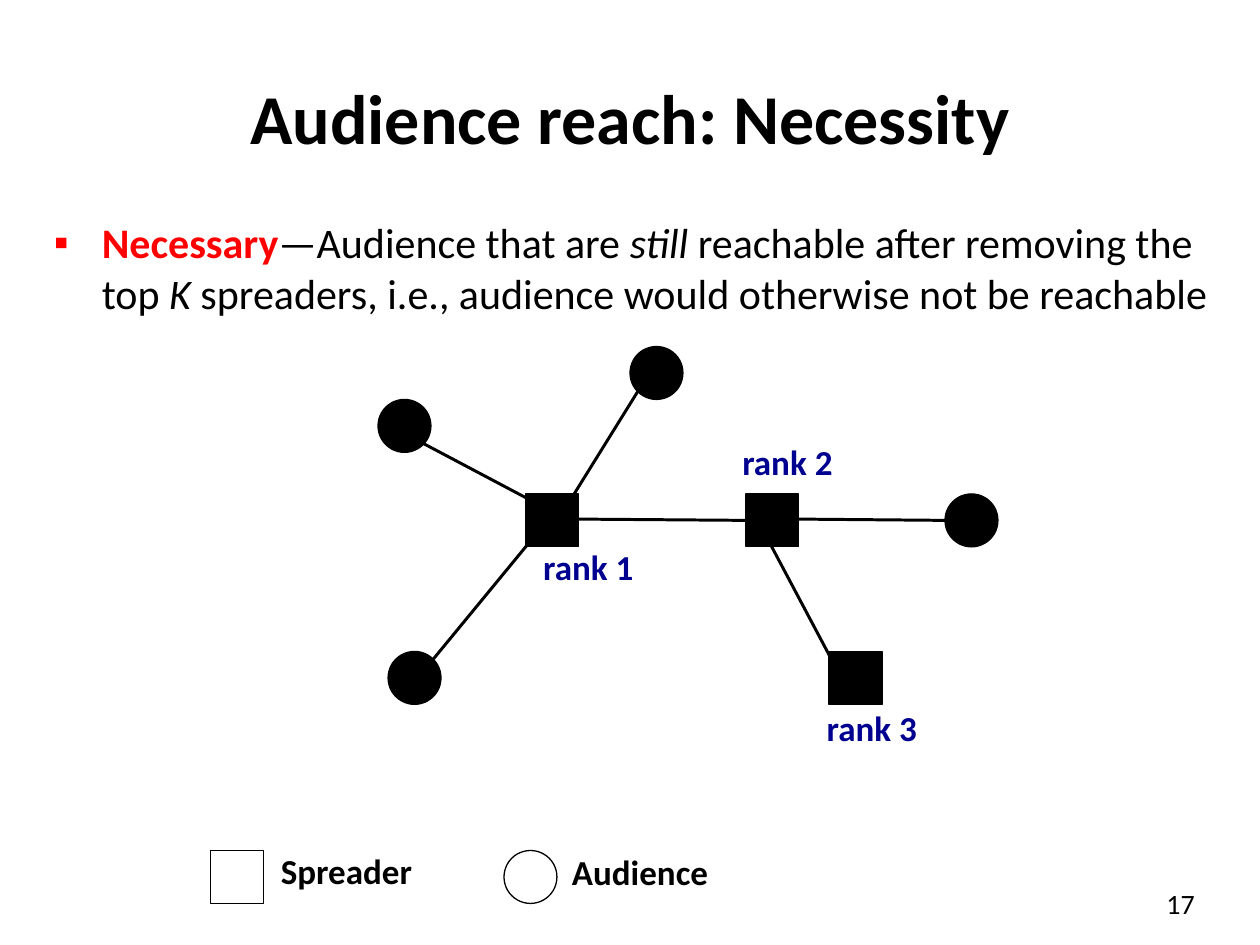
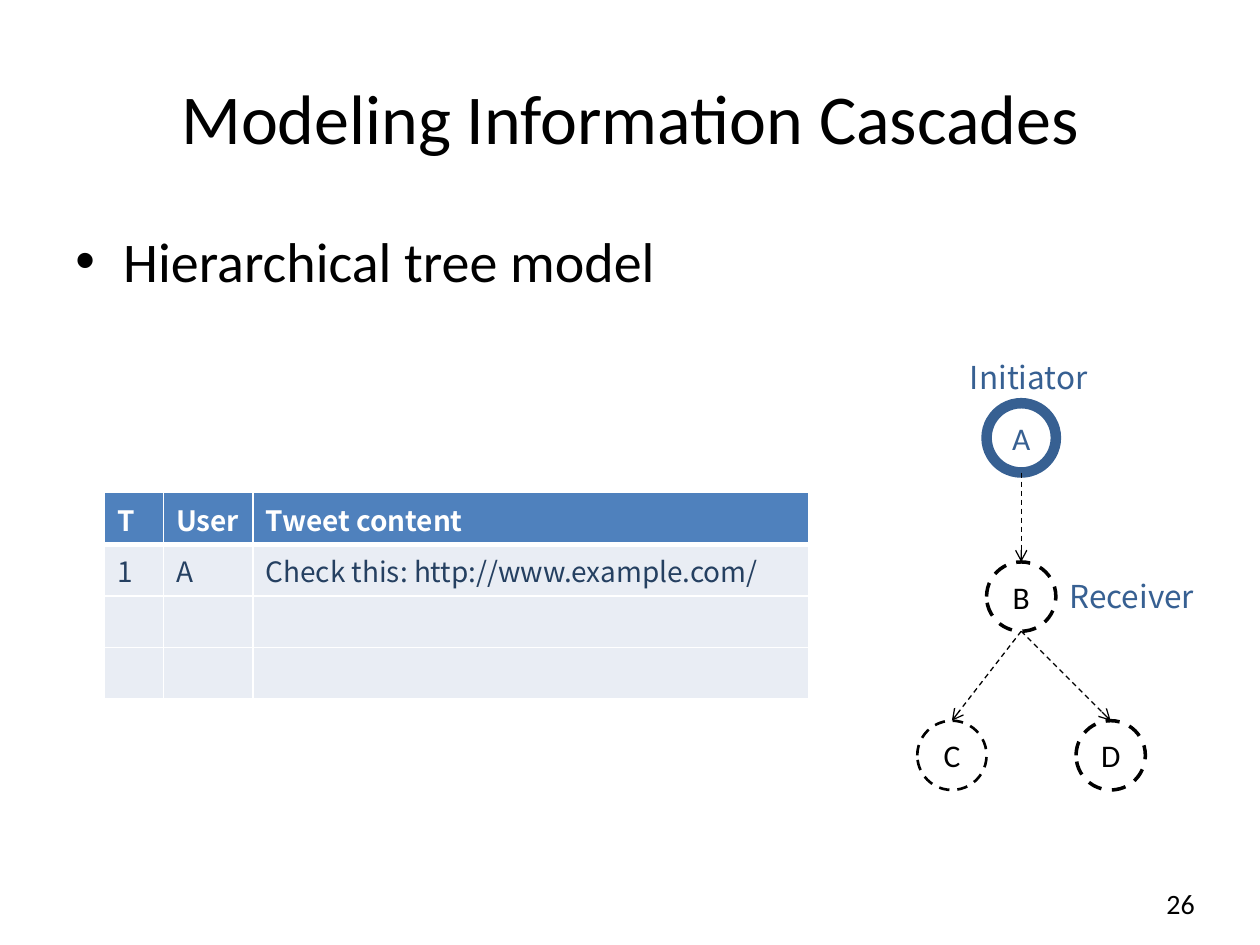
import lxml.etree
import pptx
import pptx.dml.color
import pptx.enum.dml
import pptx.enum.shapes
import pptx.enum.text
import pptx.oxml.ns
import pptx.util

Inches = pptx.util.Inches
RGBColor = pptx.dml.color.RGBColor
Kind = pptx.enum.shapes.MSO_SHAPE
Align = pptx.enum.text.PP_ALIGN
Anchor = pptx.enum.text.MSO_ANCHOR

BLACK = RGBColor(0x00, 0x00, 0x00)
WHITE = RGBColor(0xFF, 0xFF, 0xFF)
RED = RGBColor(0xFF, 0x00, 0x00)
NAVY = RGBColor(0x00, 0x00, 0x90)
STEEL = RGBColor(0x37, 0x60, 0x92)
DARK_BLUE = RGBColor(0x25, 0x40, 0x61)
HEADER_BLUE = RGBColor(0x4F, 0x81, 0xBD)
PALE_BLUE = RGBColor(0xE9, 0xED, 0xF4)

MAIN_FONT = "Calibri"
DETAIL_FONT = "Noto Sans CJK KR"


def add_element(parent, tag, **attributes):
    element = lxml.etree.SubElement(parent, pptx.oxml.ns.qn(tag))
    for name, value in attributes.items():
        element.set(name, str(value))
    return element


def add_text(paragraph, text, size=18, color=BLACK, font=MAIN_FONT,
             bold=False, italic=False):
    run = paragraph.add_run()
    run.text = text
    run.font.size = pptx.util.Pt(size)
    run.font.color.rgb = color
    run.font.name = font
    run.font.bold = bold
    run.font.italic = italic
    add_element(run.font._element, "a:ea", typeface=font)


class SlideBuilder:
    """Holds the shared style and the slide being built."""

    def __init__(self, presentation):
        self.presentation = presentation
        self.slide = None

    def start_slide(self, title, number, bold=False):
        self.slide = self.presentation.slides.add_slide(
            self.presentation.slide_layouts[6])
        self.text_box(7.5, 6.92, 2.08, 0.5, str(number), align=Align.RIGHT,
                      size=16)
        self.text_box(0.5, 0.3, 9, 1.25, title, size=40, bold=bold)

    def text_box(self, left, top, width, height, text="", align=Align.CENTER,
                 anchor=Anchor.MIDDLE, **text_format):
        box = self.slide.shapes.add_textbox(
            Inches(left), Inches(top), Inches(width), Inches(height))
        frame = box.text_frame
        frame.word_wrap = True
        frame.vertical_anchor = anchor
        paragraph = frame.paragraphs[0]
        paragraph.alignment = align
        if text:
            add_text(paragraph, text, **text_format)
        return paragraph

    def bullet(self, left, top, width, height, mark, size, runs):
        paragraph = self.text_box(left, top, width, height, align=Align.LEFT,
                                  anchor=Anchor.TOP)
        properties = paragraph._p.get_or_add_pPr()
        properties.set("marL", str(Inches(0.38)))
        properties.set("indent", str(Inches(-0.38)))
        space_before = add_element(properties, "a:spcBef")
        add_element(space_before, "a:spcPct", val=20000)
        add_element(properties, "a:buFont", typeface="Arial")
        add_element(properties, "a:buChar", char=mark)
        for text, text_format in runs:
            add_text(paragraph, text, size=size, **text_format)

    def node(self, kind, left, top, size, fill, line=BLACK, line_width=0.75,
             dashed=False, text="", text_color=BLACK):
        shape = self.slide.shapes.add_shape(
            kind, Inches(left), Inches(top), Inches(size), Inches(size))
        shape.shadow.inherit = False
        shape.fill.solid()
        shape.fill.fore_color.rgb = fill
        shape.line.color.rgb = line
        shape.line.width = pptx.util.Pt(line_width)
        if dashed:
            shape.line.dash_style = pptx.enum.dml.MSO_LINE.DASH
        if text:
            frame = shape.text_frame
            frame.margin_left = frame.margin_right = 0
            frame.vertical_anchor = Anchor.MIDDLE
            frame.paragraphs[0].alignment = Align.CENTER
            add_text(frame.paragraphs[0], text, color=text_color)

    def line(self, start, end, width, dashed_arrow=False):
        connector = self.slide.shapes.add_connector(
            pptx.enum.shapes.MSO_CONNECTOR.STRAIGHT,
            *(Inches(value) for value in (*start, *end)))
        connector.line.color.rgb = BLACK
        connector.line.width = pptx.util.Pt(width)
        if dashed_arrow:
            connector.line.dash_style = pptx.enum.dml.MSO_LINE.DASH
            add_element(connector.line._get_or_add_ln(), "a:tailEnd",
                        type="arrow")
        add_element(connector._element.spPr, "a:effectLst")

    def cell(self, cell, text, fill, bottom_width, **text_format):
        properties = cell._tc.get_or_add_tcPr()
        for side, width in (("L", 1), ("R", 1), ("T", 1), ("B", bottom_width)):
            border = add_element(properties, f"a:ln{side}",
                                 w=pptx.util.Pt(width))
            solid = add_element(border, "a:solidFill")
            add_element(solid, "a:srgbClr", val=WHITE)
        cell.fill.solid()
        cell.fill.fore_color.rgb = fill
        if text:
            add_text(cell.text_frame.paragraphs[0], text, size=16,
                     font=DETAIL_FONT, **text_format)

    def table(self, left, top, column_widths, row_height, rows):
        frame = self.slide.shapes.add_table(
            len(rows), len(column_widths), Inches(left), Inches(top),
            Inches(sum(column_widths)), Inches(row_height * len(rows)))
        table = frame.table
        table.horz_banding = False
        for column, width in zip(table.columns, column_widths):
            column.width = Inches(width)
        for row_index, texts in enumerate(rows):
            table.rows[row_index].height = Inches(row_height)
            header = row_index == 0
            for column_index, text in enumerate(texts):
                self.cell(table.cell(row_index, column_index), text,
                          HEADER_BLUE if header else PALE_BLUE,
                          bottom_width=3 if header else 1,
                          color=WHITE if header else DARK_BLUE, bold=header)


def build_necessity(builder):
    builder.start_slide("Audience reach: Necessity", 17, bold=True)
    builder.bullet(0.33, 1.67, 9.5, 0.92, "▪", 24, [
        ("Necessary", {"color": RED, "bold": True}),
        ("—Audience that are ", {}),
        ("still ", {"italic": True}),
        ("reachable after removing the top ", {}),
        ("K", {"italic": True}),
        (" spreaders, i.e., audience would otherwise not be reachable", {}),
    ])

    # Network edges, behind the nodes
    for start, end in [
        ((6.33, 4.12), (7.5, 4.13)), ((6.12, 4.33), (6.64, 5.31)),
        ((4.58, 4.12), (5.92, 4.13)), ((3.36, 3.52), (4.23, 3.98)),
        ((4.23, 4.27), (3.44, 5.23)), ((4.52, 3.98), (5.06, 3.11)),
    ]:
        builder.line(start, end, 1.7)

    # Audience circles and spreader squares, then the legend
    audience = [(7.5, 3.92), (5, 2.75), (3.08, 5.17), (3, 3.17)]
    spreaders = [(4.17, 3.92), (5.92, 3.92), (6.58, 5.17)]
    for kind, places, fill in [
        (Kind.OVAL, audience, BLACK), (Kind.RECTANGLE, spreaders, BLACK),
        (Kind.RECTANGLE, [(1.67, 6.75)], WHITE), (Kind.OVAL, [(4, 6.75)], WHITE),
    ]:
        for left, top in places:
            builder.node(kind, left, top, 0.42, fill)

    # Rank and legend labels, placed by their centre
    label_width = 1.5
    for text, center, top, color in [
        ("rank 1", 4.67, 4.25, NAVY), ("rank 2", 6.25, 3.41, NAVY),
        ("rank 3", 6.92, 5.52, NAVY),
        ("Spreader", 2.75, 6.66, BLACK), ("Audience", 5.08, 6.67, BLACK),
    ]:
        builder.text_box(center - label_width / 2, top, label_width, 0.5,
                         text, size=20, color=color, bold=True)


def build_cascades(builder):
    builder.start_slide("Modeling Information Cascades", 26)
    builder.bullet(0.5, 1.75, 9, 4.95, "•", 32,
                   [("Hierarchical tree model", {})])
    builder.table(0.83, 3.91, [0.47, 0.71, 4.41], 0.41, [
        ("T", "User", "Tweet content"),
        ("1", "A", "Check this: http://www.example.com/"),
        ("", "", ""),
        ("", "", ""),
    ])

    # Cascade tree: left, top, line colour, line width, dashed
    diameter = 0.55
    users = {
        "A": (7.83, 3.2, STEEL, 6, False),
        "B": (7.83, 4.46, BLACK, 2, True),
        "C": (7.28, 5.72, BLACK, 1.5, True),
        "D": (8.54, 5.72, BLACK, 2, True),
    }
    for name, (left, top, color, width, dashed) in users.items():
        builder.node(Kind.OVAL, left, top, diameter, WHITE, color, width,
                     dashed, name, color)
    for sender, receiver in ["AB", "BD", "BC"]:
        start_left, start_top = users[sender][:2]
        end_left, end_top = users[receiver][:2]
        builder.line((start_left + diameter / 2, start_top + diameter),
                     (end_left + diameter / 2, end_top), 0.75,
                     dashed_arrow=True)

    # Role labels
    for text, left, top in [("Initiator", 7.6, 2.79), ("Receiver", 8.39, 4.53)]:
        builder.text_box(left, top, 1.26, 0.4, text, align=Align.LEFT,
                         anchor=Anchor.TOP, color=STEEL, font=DETAIL_FONT)


def main():
    presentation = pptx.Presentation()
    presentation.slide_width = Inches(10)
    presentation.slide_height = Inches(7.5)
    builder = SlideBuilder(presentation)
    build_necessity(builder)
    build_cascades(builder)
    presentation.save("out.pptx")


if __name__ == "__main__":
    main()
